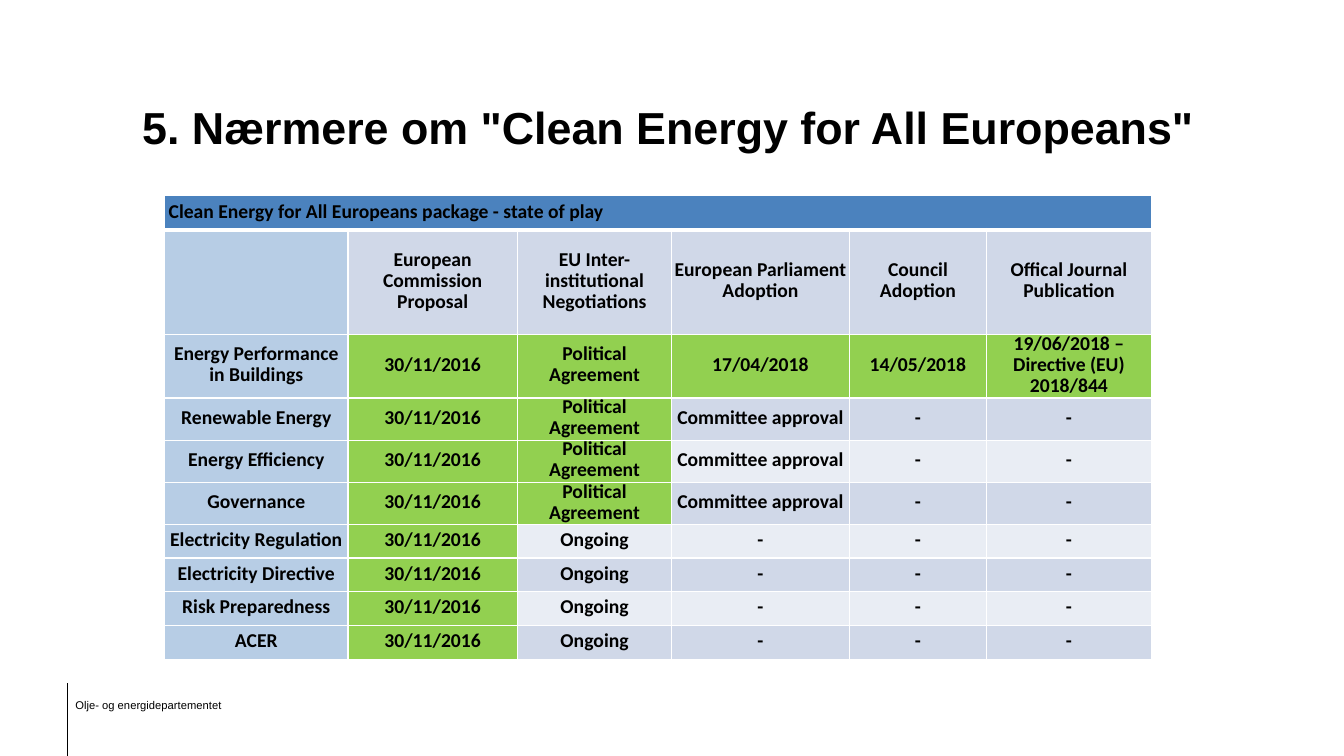
from lxml import etree
from pptx import Presentation
from pptx.dml.color import RGBColor
from pptx.enum.shapes import MSO_CONNECTOR
from pptx.enum.text import MSO_ANCHOR, PP_ALIGN
from pptx.oxml.ns import qn
from pptx.util import Cm, Pt

LEFT, CENTER = PP_ALIGN.LEFT, PP_ALIGN.CENTER
MIDDLE, BOTTOM = MSO_ANCHOR.MIDDLE, MSO_ANCHOR.BOTTOM
STRAIGHT = MSO_CONNECTOR.STRAIGHT

COLORS = {
    "text": "000000",
    "border": "FFFFFF",
    "banner": "4B82BE",
    "label": "B7CDE5",
    "header": "D0D8E8",
    "done": "92D050",
    "dark band": "D0D8E8",
    "light band": "E9EDF4",
}

COLUMN_WIDTHS = [4.62, 4.27, 3.89, 4.47, 3.47, 4.14]
ROW_HEIGHTS = [0.86, 2.63, 1.61] + [1.06] * 3 + [0.85] * 4
BANNER = "Clean Energy for All Europeans package - state of play"
HEADERS = [
    "",
    "European Commission\nProposal",
    "EU Inter-institutional\nNegotiations",
    "European Parliament\nAdoption",
    "Council\nAdoption",
    "Offical Journal\nPublication",
]
PROPOSED, AGREED = "30/11/2016", "Political Agreement"
APPROVAL, ONGOING, NONE = "Committee approval", "Ongoing", "-"
PENDING = {APPROVAL, ONGOING, NONE}
DOSSIERS = [
    ["Energy Performance\nin Buildings", PROPOSED, AGREED, "17/04/2018",
     "14/05/2018", "19/06/2018 –\nDirective (EU) 2018/844"],
]
DOSSIERS += [[name, PROPOSED, AGREED, APPROVAL, NONE, NONE]
             for name in ("Renewable Energy", "Energy Efficiency", "Governance")]
DOSSIERS += [[name, PROPOSED, ONGOING, NONE, NONE, NONE]
             for name in ("Electricity Regulation", "Electricity Directive",
                          "Risk Preparedness", "ACER")]


def color(name):
    return RGBColor.from_string(COLORS[name])


def write_text(text_frame, text, *, size, font="Arial", bold=False,
               align=LEFT, line_spacing=1.0):
    """Write each line of text as a formatted paragraph."""
    text_frame.word_wrap = True
    for index, line in enumerate(text.split("\n")):
        paragraph = text_frame.add_paragraph() if index else text_frame.paragraphs[0]
        paragraph.alignment = align
        paragraph.line_spacing = line_spacing
        run = paragraph.add_run()
        run.text = line
        run.font.name = font
        run.font.size = Pt(size)
        run.font.bold = bold
        run.font.color.rgb = color("text")


def set_borders(cell, bottom_width):
    properties = cell._tc.get_or_add_tcPr()
    for side, width in (("L", 1), ("R", 1), ("T", 1), ("B", bottom_width)):
        border = etree.SubElement(properties, qn(f"a:ln{side}"), w=str(Pt(width)))
        fill = etree.SubElement(border, qn("a:solidFill"))
        etree.SubElement(fill, qn("a:srgbClr"), val=COLORS["border"])


def format_cell(cell, text, fill, align=CENTER, left_margin=0, bottom_width=1):
    set_borders(cell, bottom_width)
    cell.fill.solid()
    cell.fill.fore_color.rgb = color(fill)
    cell.margin_left = Cm(left_margin)
    cell.margin_right = cell.margin_top = cell.margin_bottom = 0
    cell.vertical_anchor = MIDDLE
    if text:
        write_text(cell.text_frame, text, size=14, font="Calibri", bold=True,
                   align=align, line_spacing=Pt(15))


def fill_name(row, column, text):
    """Return the colour name for a dossier cell."""
    if column == 0:
        return "label"
    if text not in PENDING:
        return "done"
    return "dark band" if row % 2 else "light band"


def add_title(slide, left, top, width, height):
    title = slide.shapes.title
    title.left, title.top, title.width, title.height = map(Cm, (left, top, width, height))
    title.text_frame.vertical_anchor = BOTTOM
    write_text(title.text_frame, '5. Nærmere om "Clean Energy for All Europeans"',
               size=32, bold=True)


def add_status_table(slide, left, top):
    frame = slide.shapes.add_table(
        len(ROW_HEIGHTS), len(COLUMN_WIDTHS), Cm(left), Cm(top),
        Cm(sum(COLUMN_WIDTHS)), Cm(sum(ROW_HEIGHTS)))
    table = frame.table
    table.first_row = table.horz_banding = False
    for column, width in zip(table.columns, COLUMN_WIDTHS):
        column.width = Cm(width)
    for row, height in zip(table.rows, ROW_HEIGHTS):
        row.height = Cm(height)

    last_column = len(COLUMN_WIDTHS) - 1
    table.cell(0, 0).merge(table.cell(0, last_column))
    for column, header in enumerate(HEADERS):
        format_cell(table.cell(0, column), "" if column else BANNER, "banner",
                    align=LEFT, left_margin=0.1, bottom_width=3)
        format_cell(table.cell(1, column), header, "header" if column else "label")
    for row, dossier in enumerate(DOSSIERS):
        for column, text in enumerate(dossier):
            format_cell(table.cell(row + 2, column), text, fill_name(row, column, text))


def add_footer(slide, left, top, width, height):
    rule_left, rule_top = Cm(left + 0.05), Cm(top - 0.28)
    rule = slide.shapes.add_connector(STRAIGHT, rule_left, rule_top,
                                      rule_left, Cm(19.05))
    rule.line.color.rgb = color("text")
    rule.line.width = Pt(0.75)
    etree.SubElement(rule._element.spPr, qn("a:effectLst"))
    box = slide.shapes.add_textbox(Cm(left), Cm(top), Cm(width), Cm(height))
    write_text(box.text_frame, "Olje- og energidepartementet", size=8,
               line_spacing=0.9)


def main():
    presentation = Presentation()
    presentation.slide_width, presentation.slide_height = Cm(33.87), Cm(19.05)
    slide = presentation.slides.add_slide(presentation.slide_layouts[5])
    add_footer(slide, 1.65, 17.5, 7.19, 0.56)
    add_title(slide, 3.33, 0.81, 27.2, 3.18)
    add_status_table(slide, 4.15, 4.93)
    presentation.save("out.pptx")


if __name__ == "__main__":
    main()
